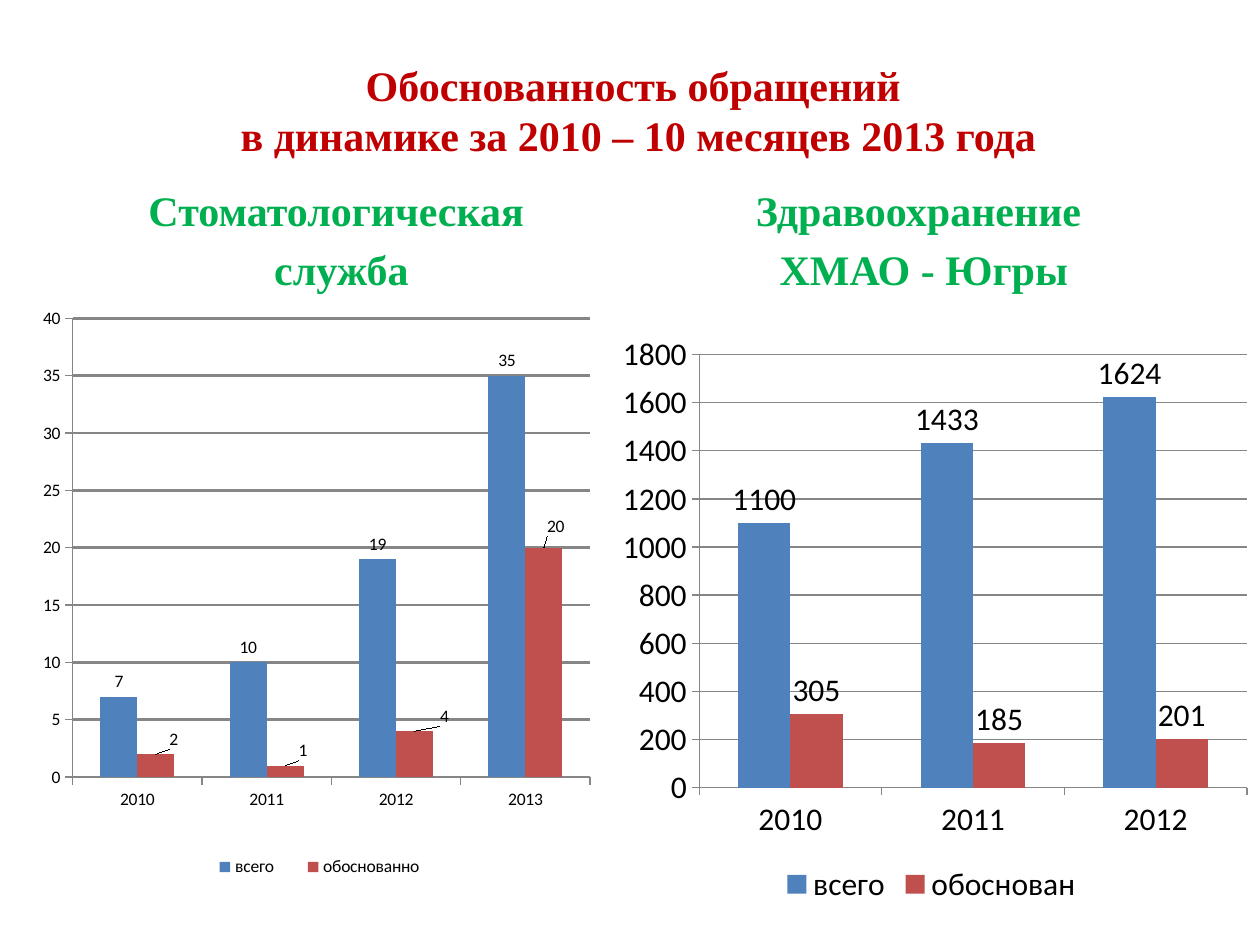
from lxml.etree import SubElement
from pptx import Presentation
from pptx.chart.data import CategoryChartData
from pptx.dml.color import RGBColor
from pptx.enum.chart import XL_CHART_TYPE, XL_LABEL_POSITION, XL_LEGEND_POSITION, XL_TICK_MARK
from pptx.enum.text import MSO_ANCHOR, PP_ALIGN
from pptx.oxml.ns import qn
from pptx.util import Inches, Pt

COLORS = {
    "title": "C00000",
    "heading": "00B050",
    "total": "4F81BD",
    "justified": "C0504D",
    "text": "000000",
    "line": "868686",
}


def add_layout(parent, position, **values):
    """Put a manual chart layout at the given child position."""
    layout = SubElement(parent, qn("c:layout"))
    manual = SubElement(layout, qn("c:manualLayout"))
    for name, value in values.items():
        SubElement(manual, qn(f"c:{name}")).set("val", str(value))
    parent.insert(position, layout)


def format_run(run, color):
    run.font.name = "Times New Roman"
    run.font.size = Pt(24)
    run.font.bold = True
    run.font.color.rgb = RGBColor.from_string(COLORS[color])


presentation = Presentation()
presentation.slide_width = Inches(10)
presentation.slide_height = Inches(7.5)
slide = presentation.slides.add_slide(presentation.slide_layouts.get_by_name("Comparison"))

# Title and column headings
texts = [
    (0, (0.55, 0.36, 8.95, 1.02), "title",
     [["Обоснованность обращений", " в динамике за 2010 – 10 месяцев 2013 года"]], MSO_ANCHOR.MIDDLE),
    (1, (0.5, 1.39, 4.42, 0.99), "heading",
     [["Стоматологическая "], ["служба"]], MSO_ANCHOR.BOTTOM),
    (3, (5.08, 1.31, 4.42, 1.07), "heading",
     [["Здравоохранение"], [" ХМАО - Югры"]], MSO_ANCHOR.BOTTOM),
]
placeholders = {shape.placeholder_format.idx: shape for shape in slide.placeholders}
for index, box, color, paragraphs, anchor in texts:
    shape = placeholders.pop(index)
    shape.left, shape.top, shape.width, shape.height = map(Inches, box)
    frame = shape.text_frame
    frame.vertical_anchor = anchor
    for number, lines in enumerate(paragraphs):
        paragraph = frame.add_paragraph() if number else frame.paragraphs[0]
        paragraph.alignment = PP_ALIGN.CENTER
        for line_number, line in enumerate(lines):
            if line_number:
                paragraph.add_line_break()
            run = paragraph.add_run()
            run.text = line
            format_run(run, color)

for shape in placeholders.values():
    shape._element.getparent().remove(shape._element)

# Column charts
charts = [
    {"box": (4.84, 2.57, 5.16, 4.65), "size": 18, "grid": 0.75, "maximum": 1800, "step": 200,
     "categories": ["2010", "2011", "2012"],
     "series": {"всего": [1100, 1433, 1624], "обоснован ": [305, 185, 201]}},
    {"box": (0.2, 2.38, 4.72, 4.92), "size": 10, "grid": 1.5, "maximum": 40, "step": 5,
     "categories": ["2010", "2011", "2012", "2013"],
     "series": {"всего": [7, 10, 19, 35], "обоснованно": [2, 1, 4, 20]},
     "plot": {"x": 0.08, "y": 0.03, "w": 0.87, "h": 0.74},
     "legend": {"x": 0.28, "y": 0.88, "w": 0.43, "h": 0.07},
     "label_shifts": [(0.03, 0), (0.03, 0), (0.05, 0), (0.02, -0.01)]},
]
for settings in charts:
    data = CategoryChartData()
    data.categories = settings["categories"]
    for name, values in settings["series"].items():
        data.add_series(name, values)
    chart = slide.shapes.add_chart(
        XL_CHART_TYPE.COLUMN_CLUSTERED, *map(Inches, settings["box"]), data).chart
    chart.has_title = False
    chart.font.name = "Calibri"
    chart.font.size = Pt(settings["size"])
    chart.font.color.rgb = RGBColor.from_string(COLORS["text"])
    chart.has_legend = True
    chart.legend.position = XL_LEGEND_POSITION.BOTTOM
    chart.legend.include_in_layout = False

    value_axis = chart.value_axis
    value_axis.minimum_scale = 0
    value_axis.maximum_scale = settings["maximum"]
    value_axis.major_unit = settings["step"]
    value_axis.has_major_gridlines = True
    gridline = value_axis.major_gridlines.format.line
    gridline.width = Pt(settings["grid"])
    gridline.color.rgb = RGBColor.from_string(COLORS["line"])
    for axis in (chart.category_axis, value_axis):
        axis.major_tick_mark = XL_TICK_MARK.OUTSIDE
        axis.format.line.width = Pt(0.75)
        axis.format.line.color.rgb = RGBColor.from_string(COLORS["line"])

    plot = chart.plots[0]
    plot.gap_width = 150
    plot.overlap = 0
    plot.vary_by_categories = False
    for series, color in zip(plot.series, ("total", "justified")):
        series.format.fill.solid()
        series.format.fill.fore_color.rgb = RGBColor.from_string(COLORS[color])
        series.data_labels.show_value = True
        series.data_labels.position = XL_LABEL_POSITION.OUTSIDE_END

    if "plot" in settings:
        plot_area = chart._chartSpace.chart.plotArea
        for old_layout in plot_area.findall(qn("c:layout")):
            plot_area.remove(old_layout)
        add_layout(plot_area, 0, layoutTarget="inner", xMode="edge", yMode="edge", **settings["plot"])
        legend = chart.legend._element
        for old_layout in legend.findall(qn("c:layout")):
            legend.remove(old_layout)
        add_layout(legend, 1, xMode="edge", yMode="edge", **settings["legend"])

    for index, (x, y) in enumerate(settings.get("label_shifts", [])):
        label = plot.series[1].points[index].data_label
        label.position = XL_LABEL_POSITION.OUTSIDE_END
        label.font.size = Pt(settings["size"])
    for label, (x, y) in zip(plot.series[1]._element.iter(qn("c:dLbl")),
                             settings.get("label_shifts", [])):
        add_layout(label, 1, x=x, y=y)

presentation.save("out.pptx")
